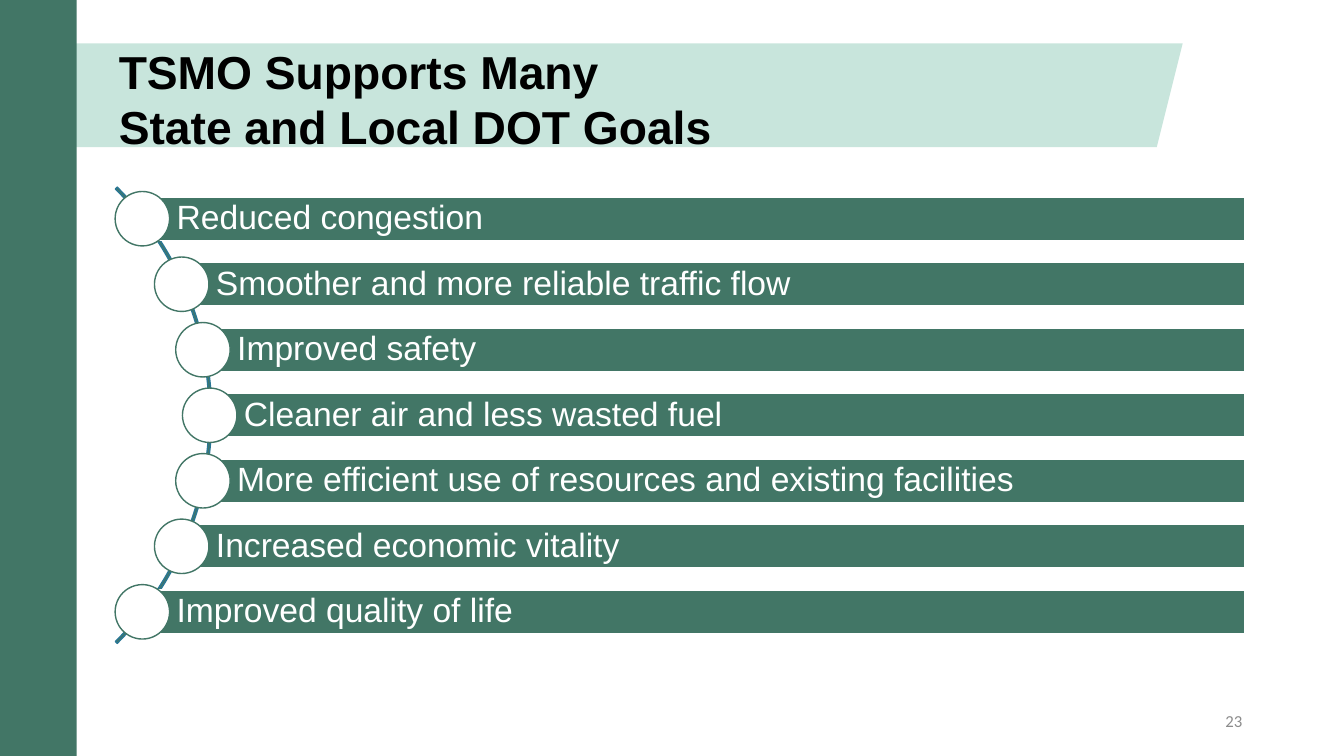
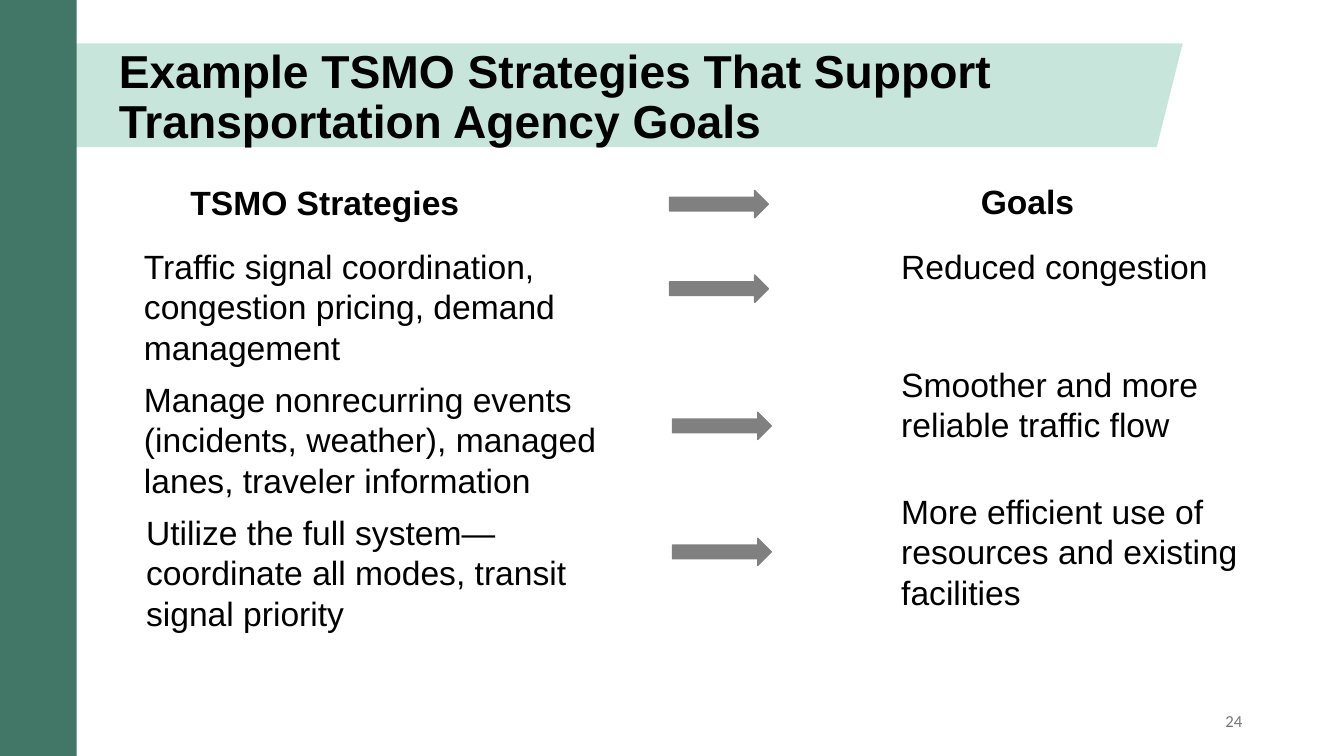
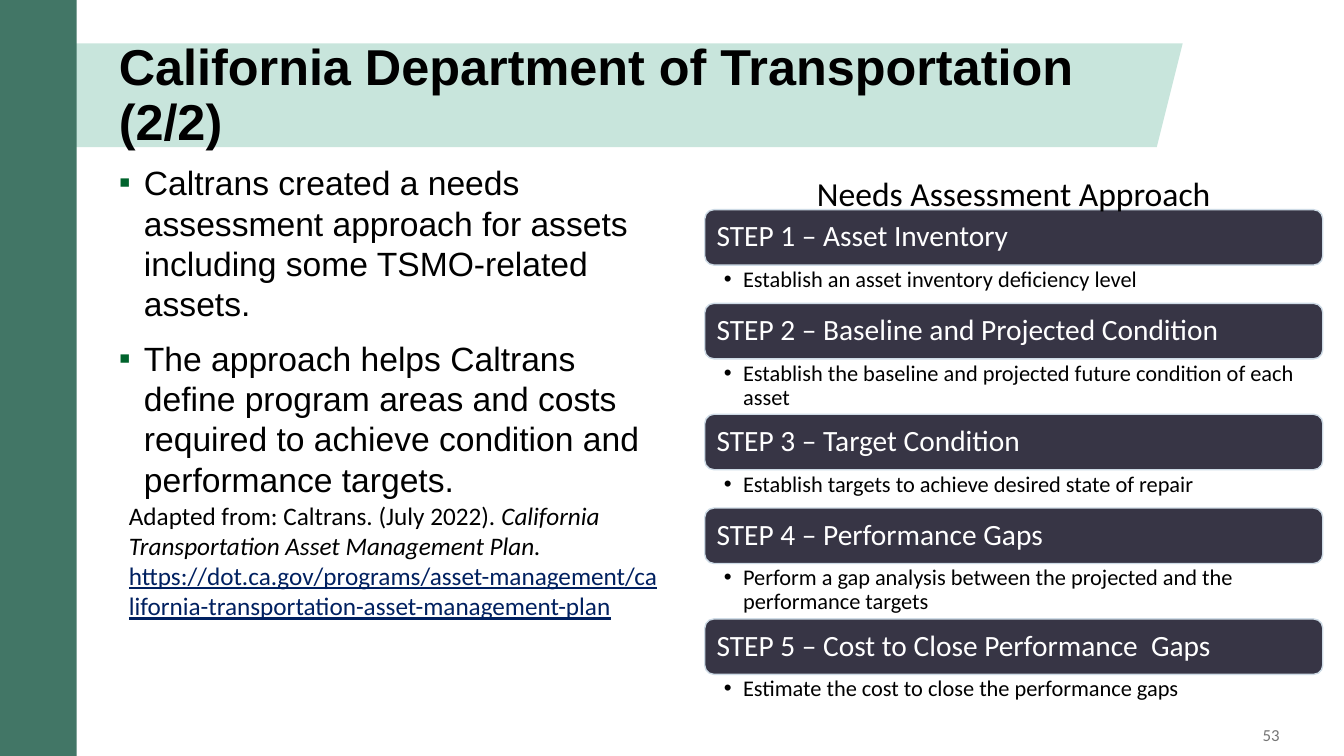
from math import sqrt
from lxml.etree import SubElement
from pptx import Presentation
from pptx.dml.color import RGBColor
from pptx.enum.shapes import MSO_SHAPE as SHAPE
from pptx.enum.text import MSO_ANCHOR as ANCHOR, PP_ALIGN as ALIGN
from pptx.oxml.ns import qn
from pptx.util import Inches, Pt

# Shared look
WIDE, HIGH = 13.33, 7.5
GREEN, MINT, TEAL, GREY = "427666", "C8E5DC", "2A7795", "808080"
DARK, PALE, NAVY, LEAF = "373545", "CEDBE6", "002060", "00632C"
BLACK, WHITE = "000000", "FFFFFF"
PAD = (0.1, 0.05, 0.1, 0.05)

# Slide 1: goals along an arc
AIMS = [
    "Reduced congestion",
    "Smoother and more reliable traffic flow",
    "Improved safety",
    "Cleaner air and less wasted fuel",
    "More efficient use of resources and existing facilities",
    "Increased economic vitality",
    "Improved quality of life",
]

# Slide 2: strategy (text, left, top, width), arrow (left, top), goal (text, left, top)
HEADS = (("TSMO Strategies", 1.79, 1.76, 3.57), (6.64, 1.89), ("Goals", 9.63, 1.75))
ROWS = [
    (("Traffic signal coordination, congestion pricing, demand management", 1.33, 2.39, 5.06),
     (6.64, 2.73), ("Reduced congestion", 8.84, 2.39)),
    (("Manage nonrecurring events (incidents, weather), managed lanes, traveler information",
      1.33, 3.71, 5.06),
     (6.67, 4.09), ("Smoother and more reliable traffic flow", 8.84, 3.56)),
    (("Utilize the full system—coordinate all modes, transit signal priority", 1.35, 5.03, 4.59),
     (6.67, 5.34), ("More efficient use of resources and existing facilities", 8.84, 4.82)),
]

# Slide 3: points, source line, steps (head, detail, lines of detail)
POINTS = [
    "Caltrans created a needs assessment approach for assets including some TSMO-related assets.",
    "The approach helps Caltrans define program areas and costs required to achieve condition "
    "and performance targets.",
]
CITE = [
    ("Adapted from: Caltrans. (July 2022). ", {}),
    ("California Transportation Asset Management Plan. ", {"italic": True}),
    ("https://dot.ca.gov/programs/asset-management/california-transportation-asset-management-plan",
     {"color": NAVY, "under": True}),
]
STEPS = [
    ("STEP 1 – Asset Inventory", "Establish an asset inventory deficiency level", 1),
    ("STEP 2 – Baseline and Projected Condition",
     "Establish the baseline and projected future condition of each asset", 2),
    ("STEP 3 – Target Condition", "Establish targets to achieve desired state of repair", 1),
    ("STEP 4 – Performance Gaps",
     "Perform a gap analysis between the projected and the performance targets", 2),
    ("STEP 5 – Cost to Close Performance  Gaps",
     "Estimate the cost to close the performance gaps", 1),
]


def rgb(code):
    return RGBColor.from_string(code)


def style(run, size, font, color=BLACK, bold=False, italic=False, under=False):
    face = run.font
    face.size, face.name = Pt(size), font
    face.bold, face.italic, face.underline = bold, italic, under
    face.color.rgb = rgb(color)


def bullet(para, mark, hang, color):
    props = para._p.get_or_add_pPr()
    props.set("marL", str(Inches(hang)))
    props.set("indent", str(-Inches(hang)))
    tint = SubElement(props, qn("a:buClr"))
    SubElement(tint, qn("a:srgbClr")).set("val", color)
    SubElement(props, qn("a:buFont")).set("typeface", "Arial")
    SubElement(props, qn("a:buChar")).set("char", mark)


def write(shape, paras, size=24, font="Arial", align=ALIGN.LEFT, anchor=ANCHOR.TOP, pad=PAD,
          lead=None, gap=0, mark=None, hang=0, tint=BLACK, **look):
    """Fill a shape with paragraphs; each is a string or a list of (text, look) runs."""
    frame = shape.text_frame
    frame.word_wrap, frame.vertical_anchor = True, anchor
    (frame.margin_left, frame.margin_top,
     frame.margin_right, frame.margin_bottom) = map(Inches, pad)
    for i, item in enumerate([paras] if isinstance(paras, str) else paras):
        para = frame.add_paragraph() if i else frame.paragraphs[0]
        if mark:
            bullet(para, mark, hang, tint)
        para.alignment = align
        if lead:
            para.line_spacing = lead
        if i and gap:
            para.space_before = Pt(gap)
        for words, extra in [(item, {})] if isinstance(item, str) else item:
            run = para.add_run()
            run.text = words
            style(run, size, font, **{**look, **extra})


def text(slide, box, paras, **look):
    write(slide.shapes.add_textbox(*map(Inches, box)), paras, **look)


def draw(slide, kind, box, fill, line=None):
    shape = slide.shapes.add_shape(kind, *map(Inches, box))
    shape.shadow.inherit = False
    shape.fill.solid()
    shape.fill.fore_color.rgb = rgb(fill)
    if line:
        shape.line.color.rgb = rgb(line)
        shape.line.width = Pt(1)
    else:
        shape.line.fill.background()
    return shape


def start(deck, title, top, page, size=33, lead=0.9, spot=(9.42, 6.95), shade="757575"):
    """Add a slide with the bands, title and page number."""
    slide = deck.slides.add_slide(deck.slide_layouts[6])
    draw(slide, SHAPE.PARALLELOGRAM, (0.24, 0.43, 11.49, 1.03), MINT)
    draw(slide, SHAPE.RECTANGLE, (0, 0, 0.76, HIGH), GREEN)
    text(slide, (1.08, top, 9.84, 1.03), title, size=size, lead=lead, bold=True)
    text(slide, (*spot, 3, 0.4), page, size=12, font="Calibri", color=shade,
         align=ALIGN.RIGHT, anchor=ANCHOR.MIDDLE)
    return slide


def goals(deck):
    slide = start(deck, ["TSMO Supports Many", "State and Local DOT Goals"], 0.38, "23",
                  lead=None, shade="8C8C8C")
    # Arc, then bars and dots whose centres follow it
    midx, midy, outer, track = -1.1, 4.12, 3.2, 3.18
    step, tall, dot, right = 0.65, 0.43, 0.54, 12.35
    arc = draw(slide, SHAPE.BLOCK_ARC, (midx - outer, midy - outer, 2 * outer, 2 * outer),
               GREEN, TEAL)
    for i, value in enumerate((189, 27, 0.004)):
        arc.adjustments[i] = value
    for i, aim in enumerate(AIMS):
        rise = (i - len(AIMS) // 2) * step
        x, y = midx + sqrt(track ** 2 - rise ** 2), midy + rise
        bar = draw(slide, SHAPE.RECTANGLE, (x, y - tall / 2, right - x, tall), GREEN, WHITE)
        write(bar, aim, color=WHITE, lead=0.9, anchor=ANCHOR.MIDDLE,
              pad=(0.34, 0.07, 0.07, 0.07))
        draw(slide, SHAPE.OVAL, (x - dot / 2, y - dot / 2, dot, dot), WHITE, GREEN)


def links(deck):
    slide = start(deck, "Example TSMO Strategies That Support Transportation Agency Goals",
                  0.43, "24")
    for row in [HEADS] + ROWS:
        (plan, left, top, wide), spot, (goal, x, y) = row
        bold = row is HEADS
        text(slide, (left, top, wide, 0.5 if bold else 1.31), plan, bold=bold)
        draw(slide, SHAPE.RIGHT_ARROW, (*spot, 0.98, 0.27), GREY, GREY)
        text(slide, (x, y, 3.57, 0.5 if bold else 1.31), goal, bold=bold)


def steps(deck):
    slide = start(deck, "California Department of Transportation (2/2)", 0.37, "53",
                  size=36, spot=(9.79, 7.09))
    text(slide, (1.08, 1.56, 5.56, 3.4), POINTS, gap=10, mark="▪", hang=0.25, tint=LEAF)
    text(slide, (1.18, 4.91, 5.48, 1.62), [CITE], size=18, font="Calibri")
    # Stack of steps
    left, wide, top, head = 6.99, 6.13, 2.08, 0.55
    deep = {1: 0.38, 2: 0.55}
    for name, note, lines in STEPS:
        bar = draw(slide, SHAPE.ROUNDED_RECTANGLE, (left, top, wide, head), DARK, PALE)
        write(bar, name, size=21, font="Calibri", color=WHITE, lead=0.9,
              anchor=ANCHOR.MIDDLE, pad=(0.09,) * 4)
        text(slide, (left, top + head, wide, deep[lines]), note, size=16, font="Calibri",
             lead=0.9, mark="•", hang=0.19, pad=(0.19, 0.03, 0.16, 0.03))
        top += head + deep[lines]
    text(slide, (left, 1.67, wide, 0.5), "Needs Assessment Approach", font="Calibri",
         align=ALIGN.CENTER)


def main():
    deck = Presentation()
    deck.slide_width, deck.slide_height = Inches(WIDE), Inches(HIGH)
    for build in (goals, links, steps):
        build(deck)
    deck.save("out.pptx")


if __name__ == "__main__":
    main()
